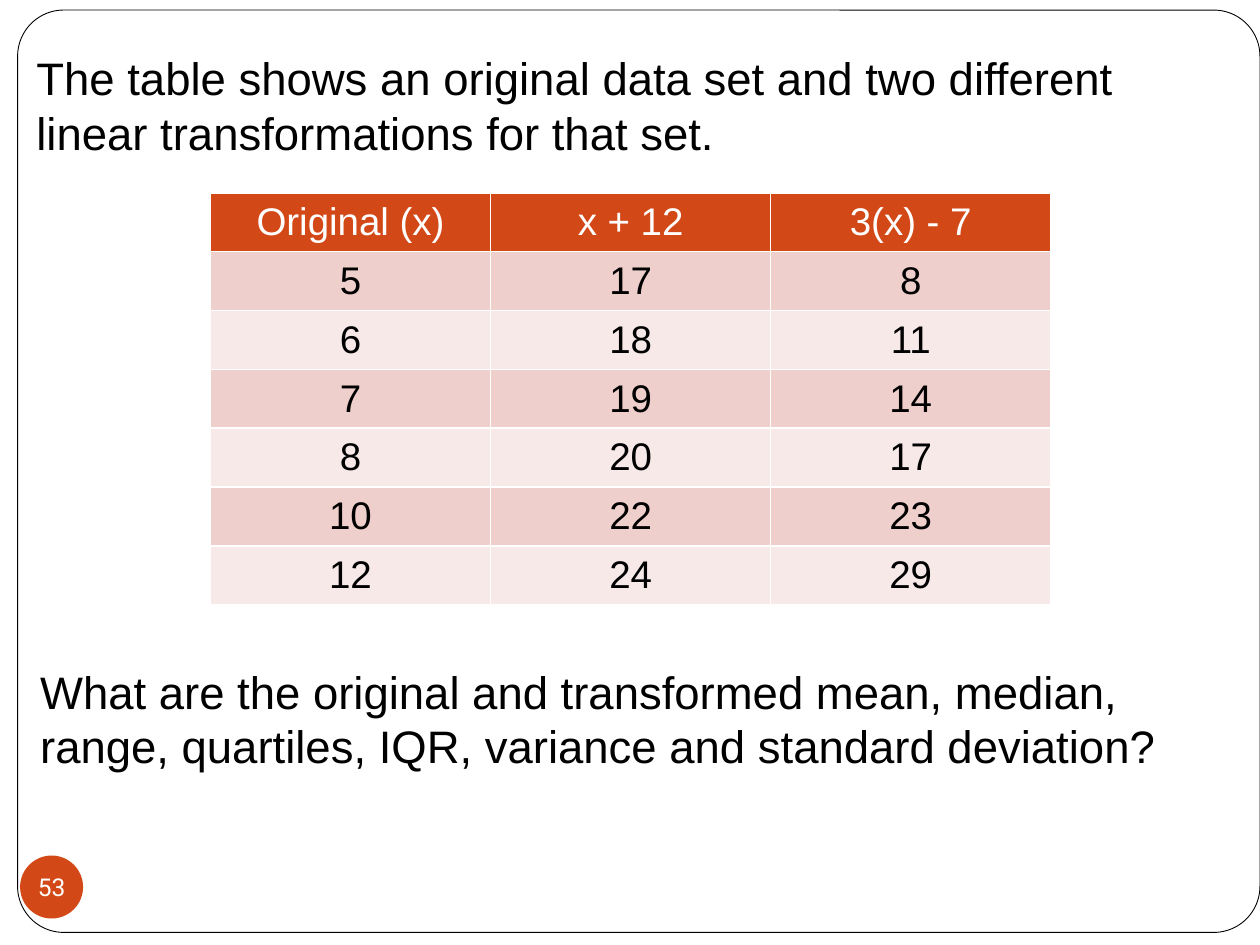
from lxml import etree
from pptx import Presentation, util as u
from pptx.dml.color import RGBColor
from pptx.enum import shapes, text
from pptx.oxml.ns import qn

COLUMNS, ROWS = 100, 75
BLACK, WHITE, ORANGE = "000000", "FFFFFF", "D34817"
BANDS = ("EFCFCC", "F7E9E8")

INTRO = ("The table shows an original data set and two different "
         "linear transformations for that set.")
QUESTION = ("What are the original and transformed mean, median, range, "
            "quartiles, IQR, variance and standard deviation?")
HEADINGS = ("Original (x)", "x + 12", "3(x) - 7")
ORIGINAL = (5, 6, 7, 8, 10, 12)


def paint(target, colour):
    """Give a fill a solid colour."""
    target.solid()
    target.fore_color.rgb = RGBColor.from_string(colour)


class Page:
    """Current slide and its style; places are in grid columns and rows."""

    font = "Arial"
    body_size, table_size = 26, 22

    def __init__(self, deck):
        self.slide = deck.slides.add_slide(deck.slide_layouts[6])
        self.column = deck.slide_width / COLUMNS
        self.row = deck.slide_height / ROWS

    def box(self, left, top, width, height):
        return (u.Emu(round(left * self.column)), u.Emu(round(top * self.row)),
                u.Emu(round(width * self.column)), u.Emu(round(height * self.row)))

    def set_words(self, frame, words, size, colour=BLACK, align=None, font=None):
        frame.text = words
        line = frame.paragraphs[0]
        line.alignment = align
        for run in line.runs:
            run.font.name = font or self.font
            run.font.size = u.Pt(size)
            run.font.color.rgb = RGBColor.from_string(colour)

    def shape(self, preset, place, fill):
        shape = self.slide.shapes.add_shape(preset, *self.box(*place))
        shape.shadow.inherit = False
        paint(shape.fill, fill)
        shape.line.fill.background()
        return shape

    def frame(self, place, corner):
        border = self.shape(shapes.MSO_SHAPE.ROUNDED_RECTANGLE, place, WHITE)
        border.adjustments[0] = corner
        paint(border.line.fill, BLACK)
        border.line.width = u.Pt(0.5)

    def statement(self, words, place):
        frame = self.slide.shapes.add_textbox(*self.box(*place)).text_frame
        frame.word_wrap = True
        self.set_words(frame, words, self.body_size)

    def badge(self, words, place):
        circle = self.shape(shapes.MSO_SHAPE.OVAL, place, ORANGE)
        frame = circle.text_frame
        frame.margin_left = frame.margin_right = 0
        frame.margin_top = frame.margin_bottom = 0
        frame.word_wrap = False
        frame.vertical_anchor = text.MSO_ANCHOR.MIDDLE
        self.set_words(frame, words, 14, WHITE, text.PP_ALIGN.CENTER, "Roboto")

    def cell_borders(self, cell):
        properties = cell._tc.get_or_add_tcPr()
        for position, side in enumerate(("a:lnL", "a:lnR", "a:lnT", "a:lnB")):
            edge = etree.Element(qn(side), w=str(u.Pt(1)))
            fill = etree.SubElement(edge, qn("a:solidFill"))
            etree.SubElement(fill, qn("a:srgbClr"), val=WHITE)
            properties.insert(position, edge)

    def table(self, records, place):
        table = self.slide.shapes.add_table(
            len(records), len(records[0]), *self.box(*place)).table
        for i, record in enumerate(records):
            fill, colour = (BANDS[(i - 1) % 2], BLACK) if i else (ORANGE, WHITE)
            for j, value in enumerate(record):
                cell = table.cell(i, j)
                cell.vertical_anchor = text.MSO_ANCHOR.MIDDLE
                paint(cell.fill, fill)
                self.set_words(cell.text_frame, str(value), self.table_size,
                               colour, text.PP_ALIGN.CENTER)
                # The default style makes the heading row bold.
                cell.text_frame.paragraphs[0].runs[0].font.bold = False
                self.cell_borders(cell)


def main():
    deck = Presentation()
    deck.slide_width, deck.slide_height = u.Inches(10), u.Inches(7.5)
    page = Page(deck)
    page.frame((1.4, 0.8, 98.6, 73.2), 0.05)
    page.statement(INTRO, (1.9, 3.5, 96.1, 9.8))
    transformed = [(x, x + 12, 3 * x - 7) for x in ORIGINAL]
    page.table([HEADINGS, *transformed], (16.7, 15.3, 66.7, 32.7))
    page.statement(QUESTION, (2.2, 52.2, 96.1, 9.8))
    page.badge("53", (1.6, 67.9, 5, 5))
    deck.save("out.pptx")


if __name__ == "__main__":
    main()
